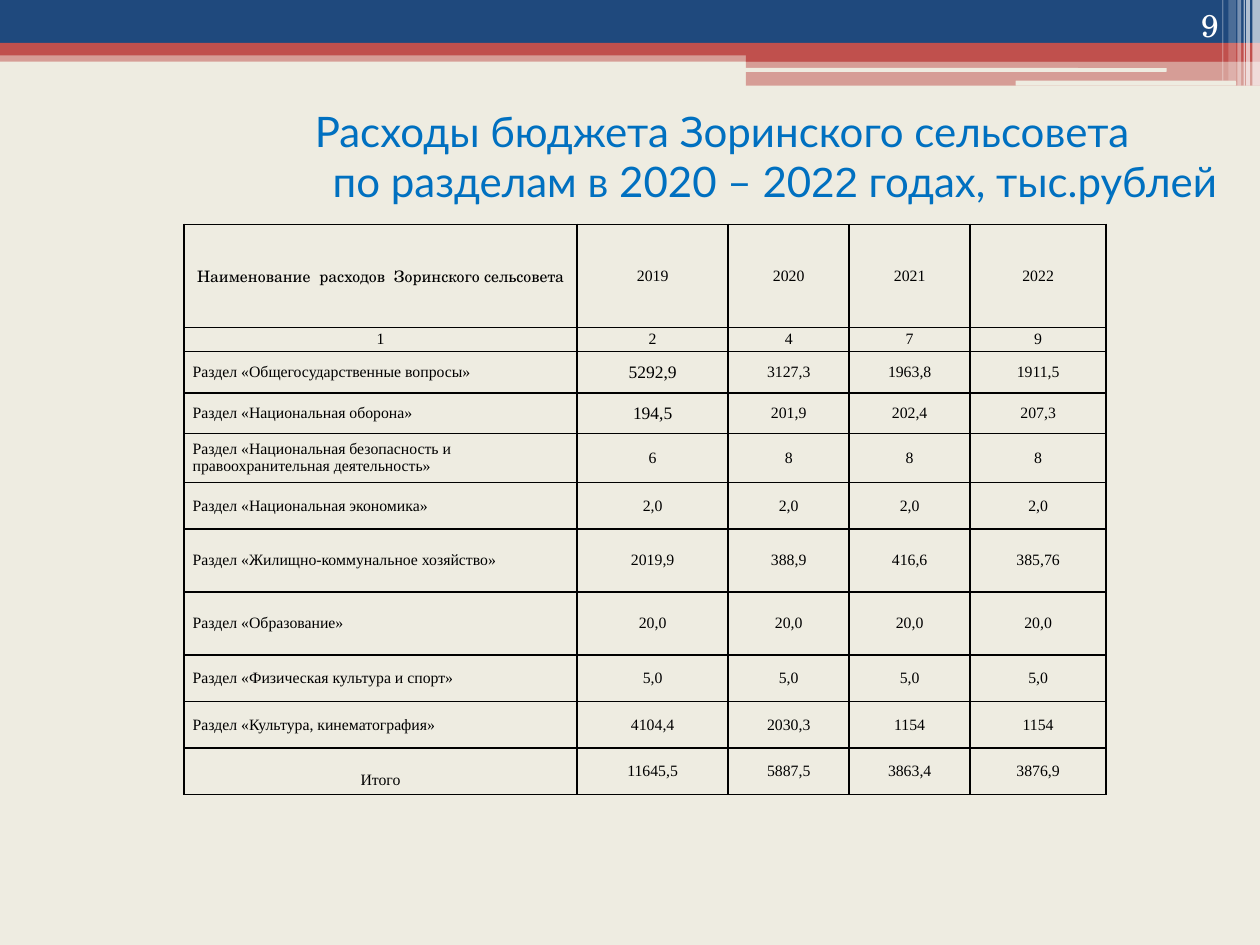
from dataclasses import dataclass

from lxml.etree import SubElement
from pptx import Presentation
from pptx.dml.color import RGBColor
from pptx.enum.shapes import MSO_SHAPE
from pptx.enum.text import MSO_ANCHOR, MSO_AUTO_SIZE, PP_ALIGN
from pptx.oxml import parse_xml
from pptx.oxml.ns import nsdecls, qn
from pptx.util import Inches, Pt


@dataclass(frozen=True)
class Theme:
    paper: str = "EEECE1"
    navy: str = "1F497D"
    red: str = "C0504D"
    white: str = "FFFFFF"
    black: str = "000000"
    blue: str = "0070C0"
    title_font: str = "Lato"
    digit_font: str = "Arial"
    accent_font: str = "TeX Gyre Schola"
    table_font: str = "Times New Roman"
    title_size: int = 24
    number_size: int = 18
    table_size: int = 9
    large_size: int = 10
    border_width: int = 1


COLUMNS, ROWS = 100, 75  # the slide grid

# Left, top, width, height in grid units, colour name, opacity in percent
BANDS = [
    (0, 4, 100, 0.9, "red", 50),
    (0, 0, 100, 3.4, "navy", 100),
    (0, 3.4, 100, 1, "red", 100),
    (59.2, 3.9, 40.8, 1, "red", 100),
    (59.2, 4.8, 40.8, 2, "red", 50),
]
SLOTS = [(59.1, 5.4, 33.5, 0.3), (80.6, 6.4, 17.5, 0.4)]
# Left, width, height, opacity
STRIPES = [
    (99.4, 0.6, 6.8, 65),
    (98.9, 0.3, 6.8, 65),
    (98.7, 0.1, 6.8, 60),
    (98.2, 0.3, 6.8, 40),
    (97.5, 0.6, 6.4, 20),
    (97, 0.1, 6.4, 30),
]
# Left indent in columns, then runs of text with the theme's font name
TITLE_LINES = [
    (14.6, [("Расходы бюджета Зоринского сельсовета", "title_font")]),
    (23, [("по разделам в 2020 – 20", "title_font"), ("22", "digit_font"),
          (" годах, тыс.рублей", "title_font")]),
]
COLUMN_WIDTHS = [31.2, 12, 9.6, 9.6, 10.8]
# Row height, then the cells
TABLE_ROWS = [
    (8.2, "Наименование  расходов  Зоринского сельсовета", "2019", "2020", "2021", "2022"),
    (1.9, "1", "2", "4", "7", "9"),
    (3.3, "Раздел «Общегосударственные вопросы»", "5292,9", "3127,3", "1963,8", "1911,5"),
    (3.2, "Раздел «Национальная оборона»", "194,5", "201,9", "202,4", "207,3"),
    (3.9, "Раздел «Национальная безопасность и правоохранительная деятельность»",
     "6", "8", "8", "8"),
    (3.7, "Раздел «Национальная экономика»", "2,0", "2,0", "2,0", "2,0"),
    (5, "Раздел «Жилищно-коммунальное хозяйство»", "2019,9", "388,9", "416,6", "385,76"),
    (5, "Раздел «Образование»", "20,0", "20,0", "20,0", "20,0"),
    (3.7, "Раздел «Физическая культура и спорт»", "5,0", "5,0", "5,0", "5,0"),
    (3.7, "Раздел «Культура, кинематография»", "4104,4", "2030,3", "1154", "1154"),
    (3.7, "Итого", "11645,5", "5887,5", "3863,4", "3876,9"),
]
TOTAL_ROW = len(TABLE_ROWS) - 1


def assign(target, values):
    for name, value in values.items():
        setattr(target, name, value)


class SlideBuilder:
    def __init__(self, presentation, theme):
        self.theme = theme
        self.column = presentation.slide_width / COLUMNS
        self.row = presentation.slide_height / ROWS
        self.slide = presentation.slides.add_slide(presentation.slide_layouts[5])
        background = self.slide.background.fill
        background.solid()
        background.fore_color.rgb = RGBColor.from_string(theme.paper)

    def box(self, left, top, width, height):
        return (round(left * self.column), round(top * self.row),
                round(width * self.column), round(height * self.row))

    def band(self, bounds, color, opacity=100, rounded=False):
        kind = MSO_SHAPE.ROUNDED_RECTANGLE if rounded else MSO_SHAPE.RECTANGLE
        shape = self.slide.shapes.add_shape(kind, *self.box(*bounds))
        shape.shadow.inherit = False
        shape.line.fill.background()
        shape.fill.solid()
        shape.fill.fore_color.rgb = RGBColor.from_string(getattr(self.theme, color))
        if opacity < 100:
            color_node = shape._element.spPr.find(".//" + qn("a:srgbClr"))
            SubElement(color_node, qn("a:alpha"), val=str(opacity * 1000))

    def text_run(self, paragraph, text, font, size, color, alignment):
        paragraph.alignment = alignment
        run = paragraph.add_run()
        run.text = text
        assign(run.font, {"name": font, "size": Pt(size)})
        run.font.color.rgb = RGBColor.from_string(color)

    def title(self, bounds, lines):
        shape = self.slide.shapes.title
        assign(shape, dict(zip(("left", "top", "width", "height"), self.box(*bounds))))
        frame = shape.text_frame
        assign(frame, {"word_wrap": True, "auto_size": MSO_AUTO_SIZE.NONE,
                       "vertical_anchor": MSO_ANCHOR.MIDDLE})
        for index, (indent, runs) in enumerate(lines):
            paragraph = frame.add_paragraph() if index else frame.paragraphs[0]
            for text, font in runs:
                self.text_run(paragraph, text, getattr(self.theme, font),
                              self.theme.title_size, self.theme.blue, PP_ALIGN.CENTER)
            paragraph._p.get_or_add_pPr().set("marL", str(round(indent * self.column)))

    def page_number(self, bounds, text):
        frame = self.slide.shapes.add_textbox(*self.box(*bounds)).text_frame
        assign(frame, {"word_wrap": True, "vertical_anchor": MSO_ANCHOR.BOTTOM})
        self.text_run(frame.paragraphs[0], text, self.theme.accent_font,
                      self.theme.number_size, self.theme.white, PP_ALIGN.RIGHT)

    def cell_borders(self, cell):
        properties = cell._tc.get_or_add_tcPr()
        for position, side in enumerate(("lnL", "lnR", "lnT", "lnB")):
            properties.insert(position, parse_xml(
                f'<a:{side} {nsdecls("a")} w="{Pt(self.theme.border_width)}"><a:solidFill>'
                f'<a:srgbClr val="{self.theme.black}"/></a:solidFill></a:{side}>'))

    def cell(self, cell, text, font, size, alignment, margin_top=0):
        assign(cell, {"margin_left": Inches(0.07), "margin_right": Inches(0.07),
                      "margin_top": margin_top, "margin_bottom": 0,
                      "vertical_anchor": MSO_ANCHOR.MIDDLE})
        cell.fill.background()
        self.cell_borders(cell)
        self.text_run(cell.text_frame.paragraphs[0], text, font, size,
                      self.theme.black, alignment)

    def budget_table(self, left, top, widths, rows):
        theme = self.theme
        bounds = self.box(left, top, sum(widths), sum(row[0] for row in rows))
        table = self.slide.shapes.add_table(len(rows), len(widths), *bounds).table
        assign(table, {"first_row": False, "horz_banding": False})
        for column, width in zip(table.columns, widths):
            column.width = round(width * self.column)
        for r, (height, *texts) in enumerate(rows):
            table.rows[r].height = round(height * self.row)
            for c, text in enumerate(texts):
                is_section = c == 0 and 2 <= r < TOTAL_ROW
                self.cell(
                    table.cell(r, c), text,
                    font=theme.accent_font if r == c == 0 else theme.table_font,
                    size=theme.large_size if c == 1 and r in (2, 3) else theme.table_size,
                    alignment=PP_ALIGN.LEFT if is_section else PP_ALIGN.CENTER,
                    # The total's label sits lower than its values
                    margin_top=Inches(0.14) if c == 0 and r == TOTAL_ROW else 0)


def main():
    presentation = Presentation()
    assign(presentation, {"slide_width": Inches(10), "slide_height": Inches(7.5)})
    builder = SlideBuilder(presentation, Theme())

    # Header decoration
    for *bounds, color, opacity in BANDS:
        builder.band(bounds, color, opacity)
    for bounds in SLOTS:
        builder.band(bounds, "paper", rounded=True)
    for left, width, height, opacity in STRIPES:
        builder.band((left, 0, width, height), "white", opacity)

    # Title and page number
    builder.title((0, 8.4, 100, 7.9), TITLE_LINES)
    builder.page_number((89.4, 0, 8.3, 4), "9")

    # Expenditure by section
    builder.budget_table(14.6, 17.8, COLUMN_WIDTHS, TABLE_ROWS)

    presentation.save("out.pptx")


if __name__ == "__main__":
    main()
